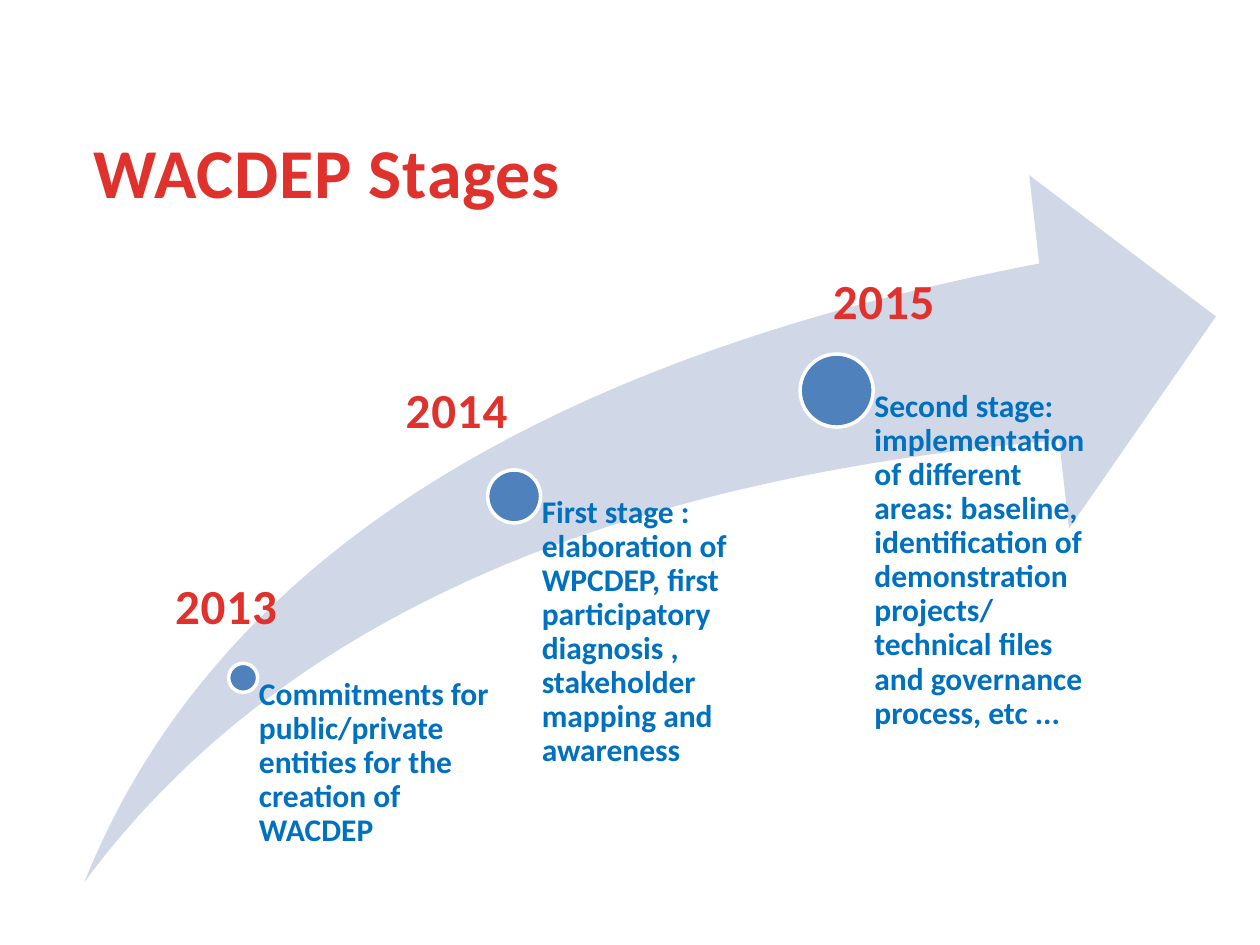
from dataclasses import dataclass

from pptx import Presentation
from pptx import util as u
from pptx.dml.color import RGBColor
from pptx.enum import shapes, text

COLORS = {"red": "E0322D", "text": "0070C0", "swoosh": "D0D8E8", "dot": "4F81BD", "outline": "FFFFFF"}
FONT = "Calibri"
STAGES_BOTTOM = 7.0


@dataclass
class Stage:
    year: str
    year_left: float
    year_top: float
    center_x: float
    center_y: float
    diameter: float
    text_width: float
    description: str


STAGES = [
    Stage("2013", 1.28, 4.52, 1.93, 5.38, 0.23, 2.09,
          "Commitments for public/private entities for the creation of WACDEP"),
    Stage("2014", 3.11, 2.96, 4.08, 3.94, 0.42, 2.15,
          "First stage : elaboration of WPCDEP, first participatory diagnosis , "
          "stakeholder mapping and awareness"),
    Stage("2015", 6.5, 2.1, 6.64, 3.1, 0.58, 2.15,
          "Second stage: implementation of different areas: baseline, identification of "
          "demonstration projects/ technical files and governance process, etc ..."),
]


def rgb(name: str) -> RGBColor:
    return RGBColor.from_string(COLORS[name])


def add_run(paragraph, content: str, size: float, color: str):
    run = paragraph.add_run()
    run.text = content
    run.font.name = FONT
    run.font.size = u.Pt(size)
    run.font.bold = True
    run.font.color.rgb = rgb(color)
    return run


def write_heading(shape, content: str, size: float) -> None:
    frame = shape.text_frame
    frame.word_wrap = False
    frame.auto_size = text.MSO_AUTO_SIZE.SHAPE_TO_FIT_TEXT
    frame.vertical_anchor = text.MSO_ANCHOR.TOP
    paragraph = frame.paragraphs[0]
    paragraph.alignment = text.PP_ALIGN.CENTER
    run = add_run(paragraph, content, size, "red")
    run.font._element.set("spc", "50")


def add_filled_shape(slide, kind, left: float, top: float, width: float, height: float, color: str):
    shape = slide.shapes.add_shape(kind, u.Inches(left), u.Inches(top), u.Inches(width), u.Inches(height))
    shape.shadow.inherit = False
    shape.fill.solid()
    shape.fill.fore_color.rgb = rgb(color)
    return shape


def add_swoosh(slide) -> None:
    swoosh = add_filled_shape(slide, shapes.MSO_SHAPE.SWOOSH_ARROW, 0.67, 1.39, 8.98, 5.61, "swoosh")
    swoosh.adjustments[0] = 0.25
    swoosh.adjustments[1] = 0.25
    swoosh.line.fill.background()


def add_stage(slide, stage: Stage) -> None:
    radius = stage.diameter / 2
    dot = add_filled_shape(slide, shapes.MSO_SHAPE.OVAL, stage.center_x - radius, stage.center_y - radius,
                           stage.diameter, stage.diameter, "dot")
    dot.line.color.rgb = rgb("outline")
    dot.line.width = u.Pt(2)

    description = slide.shapes.add_textbox(u.Inches(stage.center_x), u.Inches(stage.center_y),
                                           u.Inches(stage.text_width),
                                           u.Inches(STAGES_BOTTOM - stage.center_y))
    frame = description.text_frame
    frame.word_wrap = True
    frame.margin_left = u.Inches(radius + 0.01)
    frame.margin_top = frame.margin_right = frame.margin_bottom = 0
    paragraph = frame.paragraphs[0]
    paragraph.line_spacing = 0.9
    add_run(paragraph, stage.description, 18, "text")

    year = slide.shapes.add_textbox(u.Inches(stage.year_left), u.Inches(stage.year_top),
                                    u.Inches(1.03), u.Inches(0.57))
    write_heading(year, stage.year, 28)


def add_title(slide) -> None:
    title = slide.shapes.title
    title.left, title.top = u.Inches(0.62), u.Inches(0.97)
    title.width, title.height = u.Inches(3.95), u.Inches(0.77)
    write_heading(title, "WACDEP Stages", 40)


def main() -> None:
    presentation = Presentation()
    presentation.slide_width = u.Inches(10)
    presentation.slide_height = u.Inches(7.5)
    slide = presentation.slides.add_slide(presentation.slide_layouts[5])
    add_swoosh(slide)
    for stage in STAGES:
        add_stage(slide, stage)
    add_title(slide)
    presentation.save("out.pptx")


if __name__ == "__main__":
    main()
